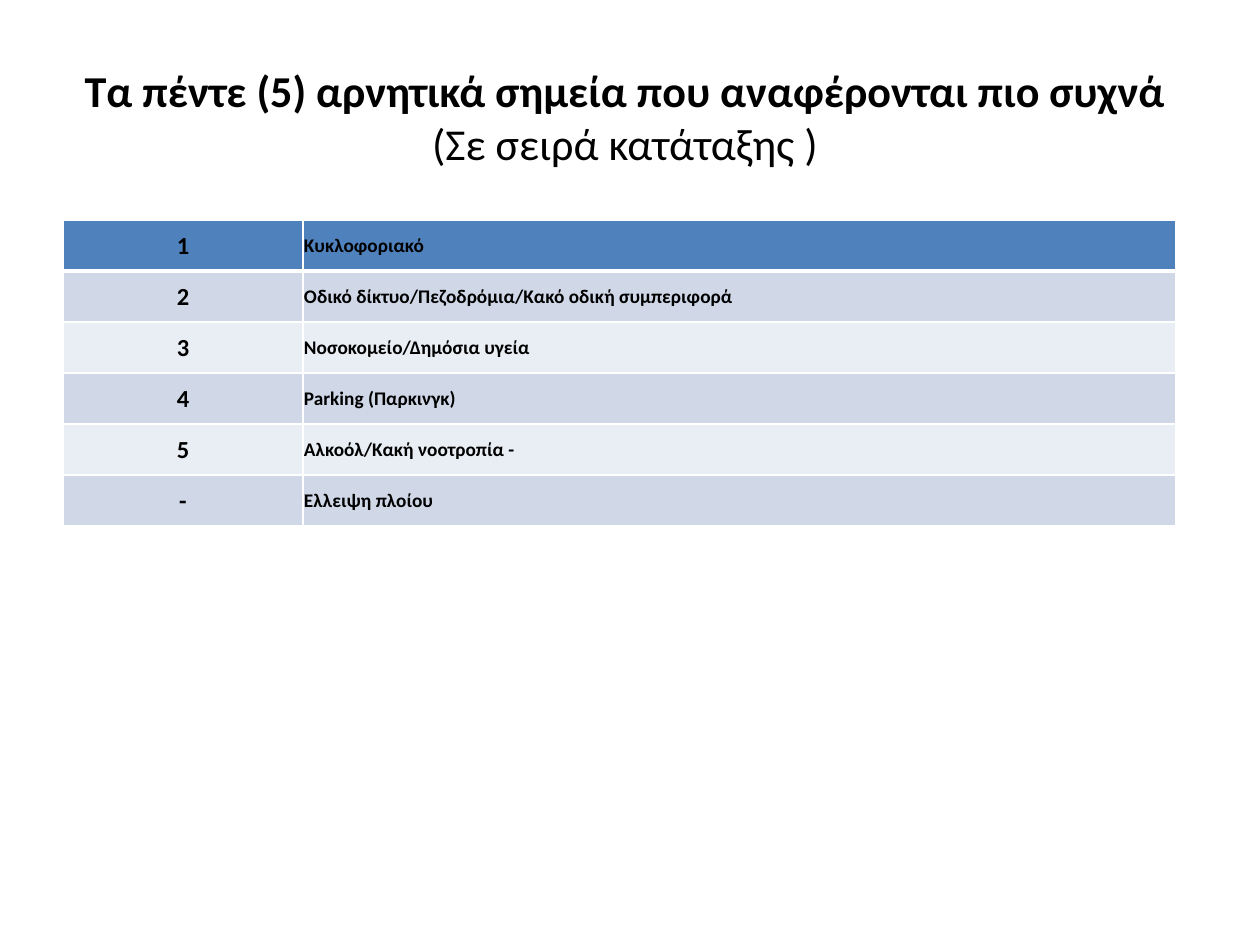
from typing import NamedTuple

from lxml import etree
from pptx import Presentation
from pptx.dml.color import RGBColor
from pptx.enum.text import MSO_ANCHOR, PP_ALIGN
from pptx.oxml.ns import qn
from pptx.util import Emu, Pt

EMU_PER_PX = 914400 / 126
MIDDLE = MSO_ANCHOR.MIDDLE
LEFT, CENTER = PP_ALIGN.LEFT, PP_ALIGN.CENTER

BLACK = RGBColor(0x00, 0x00, 0x00)
WHITE = RGBColor(0xFF, 0xFF, 0xFF)
HEADER_BLUE = RGBColor(0x4F, 0x81, 0xBD)
BANDS = (RGBColor(0xE9, 0xED, 0xF4), RGBColor(0xD0, 0xD8, 0xE8))

FONT = "Calibri"
COLUMN_WIDTHS = (240, 873)
ROW_HEIGHT = 51
THIN, THICK = 1, 3


class NegativePoint(NamedTuple):
    rank: str
    description: str


POINTS = (
    NegativePoint("1", "Κυκλοφοριακό"),
    NegativePoint("2", "Οδικό δίκτυο/Πεζοδρόμια/Κακό οδική συμπεριφορά"),
    NegativePoint("3", "Νοσοκομείο/Δημόσια υγεία"),
    NegativePoint("4", "Parking (Παρκινγκ)"),
    NegativePoint("5", "Αλκοόλ/Κακή νοοτροπία -"),
    NegativePoint("-", "Έλλειψη πλοίου"),
)


def px(length: int) -> Emu:
    return Emu(round(length * EMU_PER_PX))


def format_run(run, size: float, bold: bool) -> None:
    run.font.name = FONT
    run.font.size = Pt(size)
    run.font.bold = bold
    run.font.color.rgb = BLACK


def add_title(slide) -> None:
    shape = slide.shapes.add_textbox(px(63), px(38), px(1134), px(157))
    text_frame = shape.text_frame
    text_frame.word_wrap = True
    text_frame.vertical_anchor = MIDDLE
    paragraph = text_frame.paragraphs[0]
    paragraph.text = (
        "Τα πέντε (5) αρνητικά σημεία που αναφέρονται πιο συχνά \v"
        "(Σε σειρά κατάταξης ) "
    )
    paragraph.alignment = CENTER
    for run, bold in zip(paragraph.runs, (True, False)):
        format_run(run, 25.2, bold)


def set_borders(cell, top: int, bottom: int) -> None:
    properties = cell._tc.get_or_add_tcPr()
    widths = {"lnL": THIN, "lnR": THIN, "lnT": top, "lnB": bottom}
    for tag, width in widths.items():
        line = etree.SubElement(properties, qn(f"a:{tag}"), w=str(Pt(width)))
        fill = etree.SubElement(line, qn("a:solidFill"))
        etree.SubElement(fill, qn("a:srgbClr"), val=str(WHITE))


def fill_cell(cell, text: str, row: int, size: int, alignment: PP_ALIGN) -> None:
    set_borders(
        cell,
        top=THICK if row == 1 else THIN,
        bottom=THICK if row == 0 else THIN,
    )
    cell.fill.solid()
    cell.fill.fore_color.rgb = HEADER_BLUE if row == 0 else BANDS[row % 2]
    cell.margin_left = cell.margin_right = cell.margin_top = px(1)
    cell.margin_bottom = 0
    cell.vertical_anchor = MIDDLE
    paragraph = cell.text_frame.paragraphs[0]
    paragraph.text = text
    paragraph.alignment = alignment
    format_run(paragraph.runs[0], size, True)


def add_ranking(slide) -> None:
    table = slide.shapes.add_table(
        len(POINTS), len(COLUMN_WIDTHS), px(63), px(220),
        px(sum(COLUMN_WIDTHS)), px(ROW_HEIGHT * len(POINTS)),
    ).table
    for column, width in zip(table.columns, COLUMN_WIDTHS):
        column.width = px(width)
    for index, point in enumerate(POINTS):
        table.rows[index].height = px(ROW_HEIGHT)
        fill_cell(table.cell(index, 0), point.rank, index, 14, CENTER)
        fill_cell(table.cell(index, 1), point.description, index, 11, LEFT)


def main() -> None:
    presentation = Presentation()
    presentation.slide_width = px(1260)
    presentation.slide_height = px(945)
    slide = presentation.slides.add_slide(presentation.slide_layouts[6])

    # Heading
    add_title(slide)

    # Ranked table of negative points
    add_ranking(slide)

    presentation.save("out.pptx")


if __name__ == "__main__":
    main()
